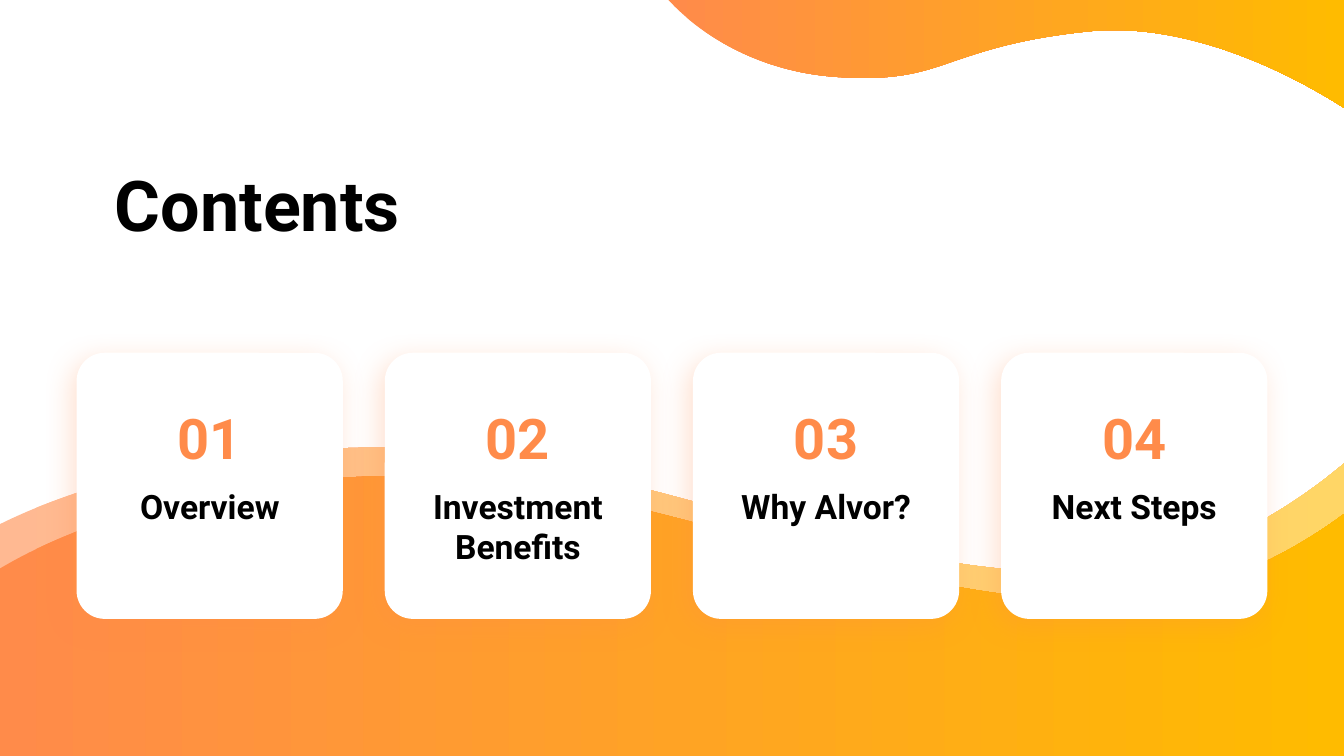
from lxml import etree
from pptx import Presentation, util as u
from pptx.dml.color import RGBColor
from pptx.enum import shapes, text
from pptx.oxml.ns import qn

COLORS = {"orange": "FF8B4A", "amber": "FFBB00", "white": "FFFFFF", "black": "000000"}
FONT = "Roboto"
SLIDE_W, SLIDE_H = 13.33, 7.5
TOPICS = ["Overview", "Investment Benefits", "Why Alvor?", "Next Steps"]

# Each wave: corner points first, then Bezier triples (control, control, end)
FRONT_WAVE = (
    [(13.33, 5.1), (13.33, 7.5), (0, 7.5), (0, 5.64)],
    [(0.94, 5.08), (2.38, 4.72), (4.06, 4.72),
     (5.18, 4.72), (6.32, 5.03), (7.47, 5.34),
     (8.62, 5.65), (9.78, 5.96), (10.92, 5.96),
     (11.85, 5.96), (12.68, 5.58), (13.33, 5.1)],
)
PALE_WAVE = (
    [(13.33, 4.6), (13.33, 7.5), (0, 7.5), (0, 5.2)],
    [(0.93, 4.74), (2.26, 4.44), (3.78, 4.44),
     (4.9, 4.44), (6.05, 4.75), (7.19, 5.06),
     (8.35, 5.37), (9.5, 5.68), (10.64, 5.68),
     (11.72, 5.68), (12.65, 5.17), (13.33, 4.6)],
)
TOP_WAVE = (
    [(6.63, 0), (13.33, 0), (13.33, 1.07)],
    [(12.72, 0.68), (11.74, 0.22), (10.81, 0.31),
     (10.13, 0.38), (9.78, 0.5), (9.48, 0.6),
     (9.14, 0.72), (8.87, 0.81), (8.25, 0.76),
     (7.55, 0.7), (6.98, 0.38), (6.63, 0)],
)


def rgb(name):
    return RGBColor.from_string(COLORS[name])


def set_opacity(color_element, percent):
    etree.SubElement(color_element, qn("a:alpha"), val=str(percent * 1000))


def add_wave(slide, corners, curve, opacity=100):
    """Draw a gradient outline whose curve points become cubic Beziers."""
    points = [(u.Inches(x), u.Inches(y)) for x, y in corners + curve]
    builder = slide.shapes.build_freeform(*points[0], scale=1.0)
    builder.add_line_segments(points[1:], close=True)
    wave = builder.convert_to_shape()
    wave.shadow.inherit = False
    wave.line.fill.background()

    segments = list(wave._element.iter(qn("a:lnTo")))[len(corners) - 1:][:len(curve)]
    for start in range(0, len(curve), 3):
        triple = segments[start:start + 3]
        bezier = etree.Element(qn("a:cubicBezTo"))
        triple[0].addprevious(bezier)
        for segment in triple:
            bezier.append(segment[0])
            segment.getparent().remove(segment)

    wave.fill.gradient()
    wave.fill.gradient_angle = 0
    for stop, position, name in zip(wave.fill.gradient_stops, (0, 1), ("orange", "amber")):
        stop.position = position
        stop.color.rgb = rgb(name)
    if opacity < 100:
        for color in wave._element.spPr.find(qn("a:gradFill")).iter(qn("a:srgbClr")):
            set_opacity(color, opacity)


def write(shape, words, size, color, align, anchor, wrap=True):
    frame = shape.text_frame
    frame.auto_size = text.MSO_AUTO_SIZE.NONE
    frame.word_wrap = wrap
    frame.vertical_anchor = anchor
    frame.margin_left = frame.margin_right = frame.margin_top = frame.margin_bottom = 0
    paragraph = frame.paragraphs[0]
    paragraph.alignment = align
    run = paragraph.add_run()
    run.text = words
    run.font.name, run.font.size, run.font.bold = FONT, u.Pt(size), True
    run.font.color.rgb = rgb(color)


def add_title(slide, left, top, width, height):
    title = slide.shapes.title
    title.left, title.top = u.Inches(left), u.Inches(top)
    title.width, title.height = u.Inches(width), u.Inches(height)
    write(title, "Contents", 50, "black", text.PP_ALIGN.LEFT, text.MSO_ANCHOR.BOTTOM)


def add_glow(shape):
    """Give a shape a soft orange shadow."""
    shape.shadow.inherit = False
    effects = shape._element.spPr.find(qn("a:effectLst"))
    shadow = etree.SubElement(
        effects, qn("a:outerShdw"), blurRad=str(u.Pt(20)), dist=str(u.Pt(6)),
        dir=str(130 * 60000), algn="ctr", rotWithShape="0")
    set_opacity(etree.SubElement(shadow, qn("a:srgbClr"), val=COLORS["orange"]), 25)


def add_card(slide, left, top, side, number, topic):
    card = slide.shapes.add_shape(
        shapes.MSO_SHAPE.ROUNDED_RECTANGLE,
        u.Inches(left), u.Inches(top), u.Inches(side), u.Inches(side))
    card.adjustments[0] = 0.106
    card.fill.solid()
    card.fill.fore_color.rgb = rgb("white")
    card.line.fill.background()
    add_glow(card)

    def add_label(offset, width, height, *style):
        label = slide.shapes.add_textbox(
            u.Inches(left + (side - width) / 2), u.Inches(top + offset),
            u.Inches(width), u.Inches(height))
        write(label, *style)

    center = text.PP_ALIGN.CENTER
    add_label(0.14, 1.01, 1.03, f"{number:02}", 40, "orange", center,
              text.MSO_ANCHOR.BOTTOM, False)
    add_label(1.32, 2.49, 1.15, topic, 24, "black", center, text.MSO_ANCHOR.TOP)


def add_cards(slide, left, top, width, side):
    pitch = (width - side) / (len(TOPICS) - 1)
    for index, topic in enumerate(TOPICS):
        add_card(slide, left + index * pitch, top, side, index + 1, topic)


def main():
    deck = Presentation()
    deck.slide_width, deck.slide_height = u.Inches(SLIDE_W), u.Inches(SLIDE_H)
    slide = deck.slides.add_slide(deck.slide_layouts[5])
    slide.background.fill.solid()
    slide.background.fill.fore_color.rgb = rgb("white")
    add_wave(slide, *FRONT_WAVE)
    add_wave(slide, *PALE_WAVE, opacity=60)
    add_wave(slide, *TOP_WAVE)
    add_title(slide, 1.14, 1.26, 4.29, 1.18)
    add_cards(slide, 0.76, 3.5, 11.81, 2.64)
    deck.save("out.pptx")


if __name__ == "__main__":
    main()
